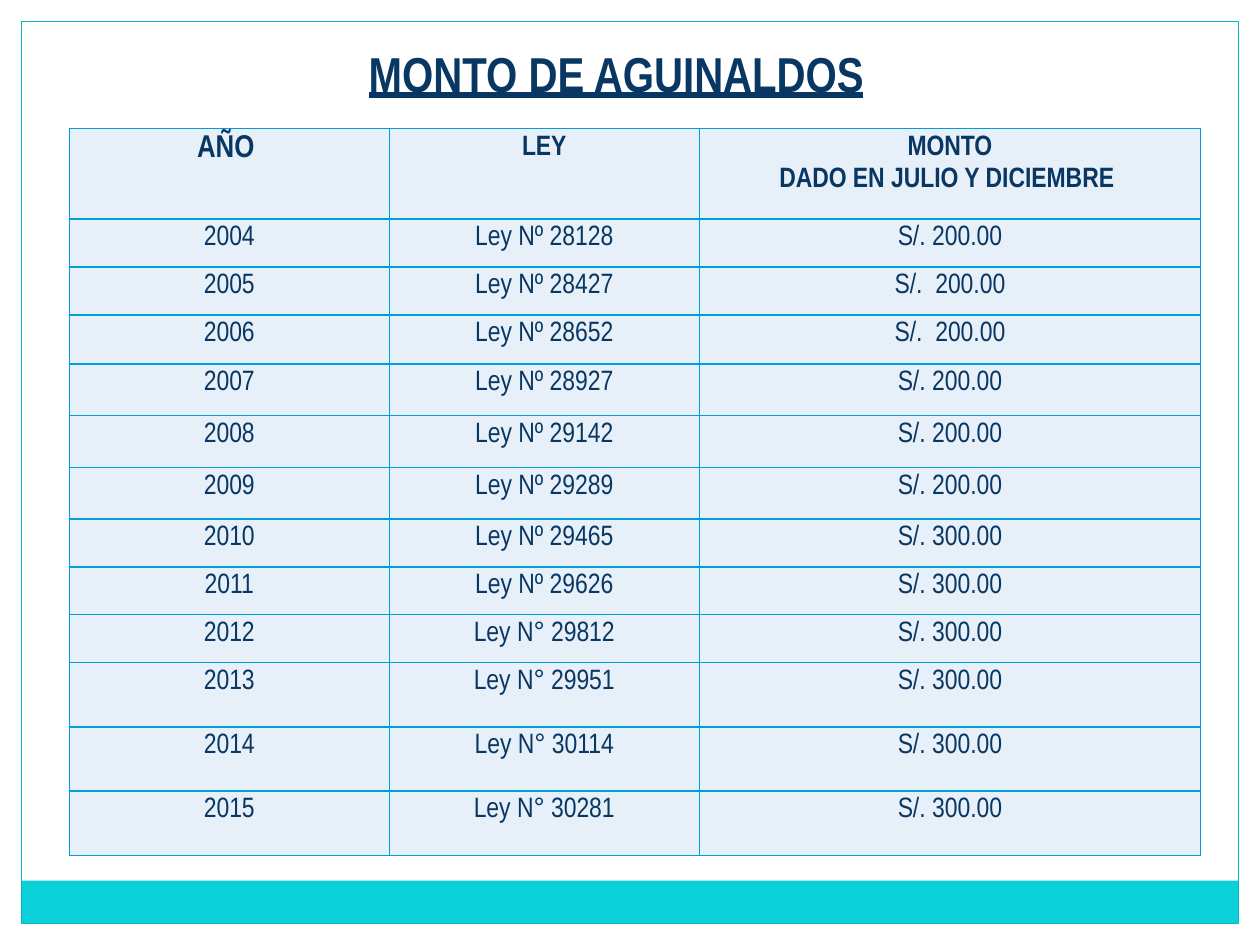
from lxml import etree
from pptx import Presentation
from pptx.dml.color import RGBColor
from pptx.enum.shapes import MSO_SHAPE as SHAPE
from pptx.enum.text import MSO_ANCHOR as ANCHOR, PP_ALIGN as ALIGN
from pptx.oxml.ns import qn
from pptx.util import Inches, Pt

FONT = "Arial Narrow"
NAVY, BLUE, PALE = "083763", "009DD9", "E7EFF8"
TURQUOISE, TEAL, WHITE = "0BD0D9", "0AB8BF", "FFFFFF"

HEADERS = ["AÑO ", "LEY", "MONTO\nDADO EN JULIO Y DICIEMBRE "]
BONUSES = [
    ("2004", "Nº 28128", "S/. 200.00"),
    ("2005", "Nº 28427", "S/.  200.00"),
    ("2006", "Nº 28652", "S/.  200.00"),
    ("2007", "Nº 28927", "S/. 200.00"),
    ("2008", "Nº 29142", "S/. 200.00"),
    ("2009", "Nº 29289", "S/. 200.00"),
    ("2010", "Nº 29465", "S/. 300.00"),
    ("2011", "Nº 29626", "S/. 300.00"),
    ("2012", "N° 29812", "S/. 300.00"),
    ("2013", "N° 29951", "S/. 300.00"),
    ("2014", "N° 30114", "S/. 300.00"),
    ("2015", "N° 30281", "S/. 300.00"),
]
COL_WIDTHS = [2.54, 2.46, 3.98]
ROW_HEIGHTS = [0.72] + [0.38] * 2 + [0.39] + [0.41] * 3 + [0.38] * 3 + [0.51] * 3


def color(value):
    return RGBColor.from_string(value)


def add_text(p, text, size, bold=False, underline=False):
    p.alignment = ALIGN.CENTER
    r = p.add_run()
    r.text = text
    r.font.name, r.font.size = FONT, Pt(size)
    r.font.bold, r.font.underline = bold, underline
    r.font.color.rgb = color(NAVY)


def add_rect(slide, box, fill=None, line=None):
    s = slide.shapes.add_shape(SHAPE.RECTANGLE, *map(Inches, box))
    s.shadow.inherit = False
    if fill:
        s.fill.solid()
        s.fill.fore_color.rgb = color(fill)
    else:
        s.fill.background()
    if line:
        s.line.color.rgb = color(line)
        s.line.width = Pt(0.75)
    else:
        s.line.fill.background()


def add_frame(slide, x, y, w, h):
    edge, band = 0.17, 0.34
    # White edges at the top, right and left
    add_rect(slide, (x, y, w, edge), fill=WHITE)
    for left in (x + w - edge, x):
        add_rect(slide, (left, y, edge, h), fill=WHITE)
    # Bottom band and outline
    inner_w, inner_h = w - 2 * edge, h - 2 * edge
    add_rect(slide, (x + edge, y + h - edge - band, inner_w, band), fill=TURQUOISE)
    add_rect(slide, (x + edge, y + edge, inner_w, inner_h), line=TEAL)


def add_title(slide, *box):
    sp = slide.shapes.title
    sp.left, sp.top, sp.width, sp.height = map(Inches, box)
    tf = sp.text_frame
    tf.word_wrap = True
    tf.vertical_anchor = ANCHOR.BOTTOM
    add_text(tf.paragraphs[0], "MONTO DE AGUINALDOS", 28, bold=True, underline=True)


def set_borders(cell):
    tc_pr = cell._tc.get_or_add_tcPr()
    # Borders come before the fill in the cell properties
    for i, side in enumerate(("a:lnL", "a:lnR", "a:lnT", "a:lnB")):
        ln = etree.Element(qn(side), w=str(Pt(1)))
        fill = etree.SubElement(ln, qn("a:solidFill"))
        etree.SubElement(fill, qn("a:srgbClr"), val=BLUE)
        tc_pr.insert(i, ln)


def fill_cell(cell, text, size, bold):
    cell.fill.solid()
    cell.fill.fore_color.rgb = color(PALE)
    cell.vertical_anchor = ANCHOR.TOP
    set_borders(cell)
    tf = cell.text_frame
    for i, line in enumerate(text.split("\n")):
        p = tf.add_paragraph() if i else tf.paragraphs[0]
        p.space_before = Pt(size * 0.2)
        add_text(p, line, size, bold)


def add_bonus_table(slide, x, y):
    rows = [HEADERS] + [(year, f"Ley {law}", amount) for year, law, amount in BONUSES]
    table = slide.shapes.add_table(
        len(rows), len(COL_WIDTHS), Inches(x), Inches(y),
        Inches(sum(COL_WIDTHS)), Inches(sum(ROW_HEIGHTS))).table
    table.horz_banding = False
    for column, width in zip(table.columns, COL_WIDTHS):
        column.width = Inches(width)
    for i, (row, height, texts) in enumerate(zip(table.rows, ROW_HEIGHTS, rows)):
        row.height = Inches(height)
        for j, text in enumerate(texts):
            size = 18 if i == j == 0 else 16
            fill_cell(table.cell(i, j), text, size, bold=i == 0)


def main():
    prs = Presentation()
    prs.slide_width, prs.slide_height = Inches(10), Inches(7.5)
    slide = prs.slides.add_slide(prs.slide_layouts[5])
    add_frame(slide, 0, 0, 10, 7.5)
    add_bonus_table(slide, 0.55, 1.02)
    add_title(slide, 0.39, 0.31, 9, 0.55)
    prs.save("out.pptx")


if __name__ == "__main__":
    main()
